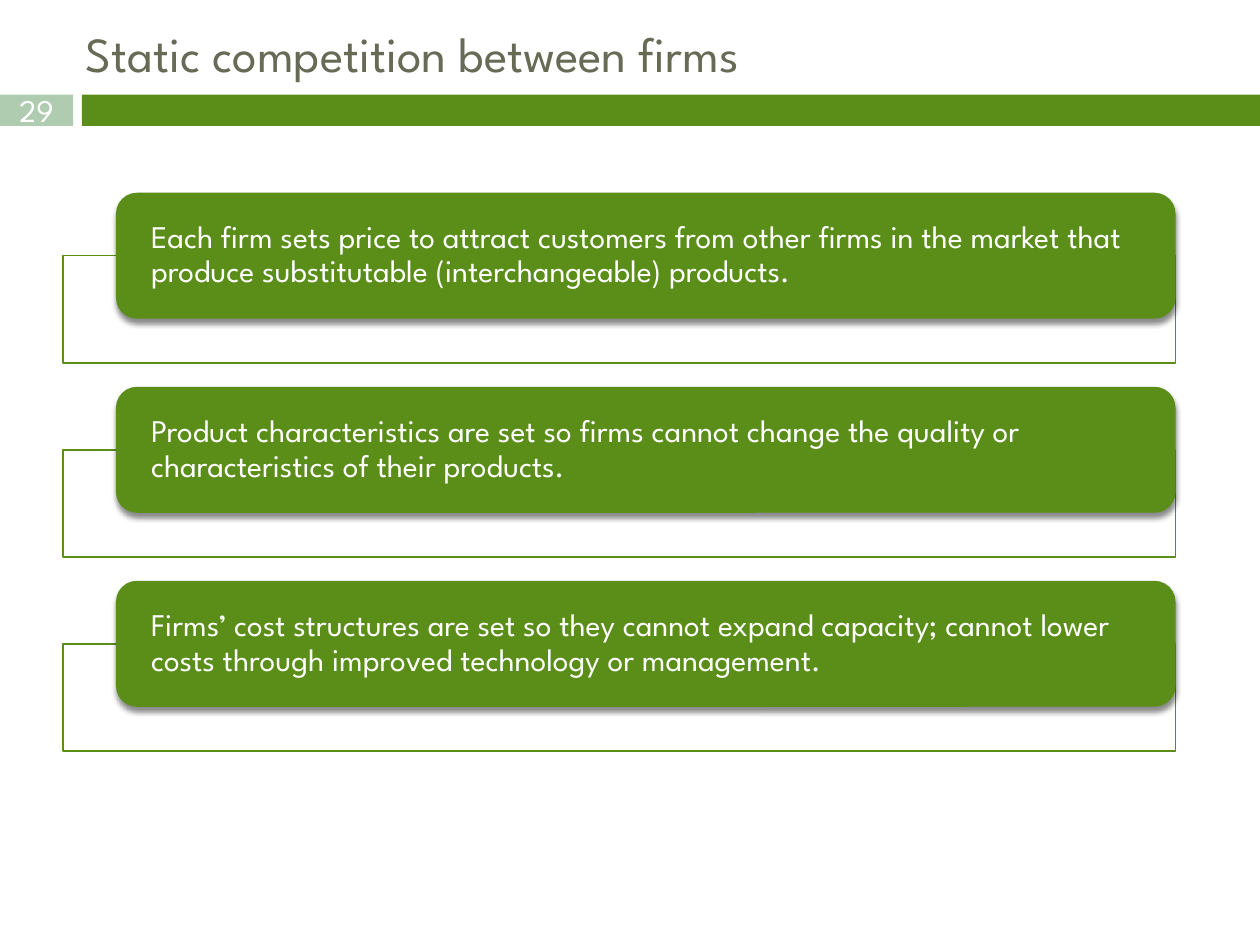
from dataclasses import dataclass

from lxml import etree
from pptx import Presentation
from pptx.dml.color import RGBColor
from pptx.enum.shapes import MSO_SHAPE
from pptx.enum.text import MSO_ANCHOR, MSO_AUTO_SIZE, PP_ALIGN
from pptx.oxml.ns import qn
from pptx.util import Inches, Pt

RECT, ROUNDED = MSO_SHAPE.RECTANGLE, MSO_SHAPE.ROUNDED_RECTANGLE
MIDDLE, NO_FIT = MSO_ANCHOR.MIDDLE, MSO_AUTO_SIZE.NONE
LEFT, CENTER = PP_ALIGN.LEFT, PP_ALIGN.CENTER
TITLE_ONLY = 5


@dataclass(frozen=True)
class Theme:
    font: str = "League Spartan"
    green: str = "5A8E19"
    pale_green: str = "B0CCB0"
    title_ink: str = "676A55"
    white: str = "FFFFFF"
    black: str = "000000"
    title_size: int = 28
    body_size: int = 18
    outline: float = 0.79


THEME = Theme()
WIDTH, HEIGHT = 10, 7.5
HEADER_TOP, HEADER_HEIGHT = 0.75, 0.25
FRAME_LEFT, CARD_LEFT, RIGHT_EDGE = 0.5, 0.92, 9.33
FIRST_ROW, ROW_PITCH = 1.53, 1.54
CARD_HEIGHT, FRAME_HEIGHT = 1, 0.85

ASSUMPTIONS = (
    "Each firm sets price to attract customers from other firms in the market "
    "that produce substitutable (interchangeable) products.",
    "Product characteristics are set so firms cannot change the quality or "
    "characteristics of their products.",
    "Firms’ cost structures are set so they cannot expand capacity; cannot "
    "lower costs through improved technology or management.",
)


def apply(target, values):
    for attribute, value in values.items():
        setattr(target, attribute, value)


def write(shape, text, size, color, align=LEFT, inset=0.1, spacing=1.0):
    frame = shape.text_frame
    frame.text = text
    apply(frame, {
        "word_wrap": True, "auto_size": NO_FIT, "vertical_anchor": MIDDLE,
        "margin_left": Inches(inset), "margin_right": Inches(inset),
        "margin_top": 0, "margin_bottom": 0,
    })
    paragraph = frame.paragraphs[0]
    apply(paragraph, {"alignment": align, "line_spacing": spacing})
    font = paragraph.runs[0].font
    apply(font, {"name": THEME.font, "size": Pt(size)})
    font.color.rgb = RGBColor.from_string(color)


def add_block(slide, kind, left, top, width, height, fill):
    block = slide.shapes.add_shape(
        kind, Inches(left), Inches(top), Inches(width), Inches(height))
    block.shadow.inherit = False
    block.fill.solid()
    block.fill.fore_color.rgb = RGBColor.from_string(fill)
    block.line.fill.background()
    return block


def set_alpha(color_element, percent):
    etree.SubElement(color_element, qn("a:alpha"), val=str(percent * 1000))


def add_drop_shadow(block):
    effects = block.element.spPr.find(qn("a:effectLst"))
    shadow = etree.SubElement(
        effects, qn("a:outerShdw"), blurRad=str(Pt(3)), dist=str(Pt(2.4)),
        dir="5400000", rotWithShape="0")
    color = etree.SubElement(shadow, qn("a:srgbClr"), val=THEME.black)
    set_alpha(color, 45)


def add_header(slide, title, number):
    number_box = add_block(slide, RECT, 0, HEADER_TOP, 0.58, HEADER_HEIGHT,
                           THEME.pale_green)
    write(number_box, number, THEME.body_size, THEME.white, CENTER, inset=0)
    add_block(slide, RECT, 0.65, HEADER_TOP, WIDTH - 0.65, HEADER_HEIGHT,
              THEME.green)
    heading = slide.shapes.title
    apply(heading, {"left": Inches(0.58), "top": Inches(0.18),
                    "width": Inches(8.92), "height": Inches(0.48)})
    write(heading, title, THEME.title_size, THEME.title_ink)


def add_assumption(slide, row, text):
    """Draw a card overlapping the outlined frame behind it."""
    top = FIRST_ROW + row * ROW_PITCH
    frame = add_block(slide, RECT, FRAME_LEFT, top + CARD_HEIGHT / 2,
                      RIGHT_EDGE - FRAME_LEFT, FRAME_HEIGHT, THEME.white)
    set_alpha(frame.element.spPr.find(qn("a:solidFill"))[0], 90)
    frame.line.color.rgb = RGBColor.from_string(THEME.green)
    frame.line.width = Pt(THEME.outline)

    card = add_block(slide, ROUNDED, CARD_LEFT, top, RIGHT_EDGE - CARD_LEFT,
                     CARD_HEIGHT, THEME.green)
    add_drop_shadow(card)
    write(card, text, THEME.body_size, THEME.white, inset=0.23, spacing=0.9)


def main():
    deck = Presentation()
    apply(deck, {"slide_width": Inches(WIDTH), "slide_height": Inches(HEIGHT)})
    slide = deck.slides.add_slide(deck.slide_layouts[TITLE_ONLY])
    add_header(slide, "Static competition between firms", "29")
    for row, text in enumerate(ASSUMPTIONS):
        add_assumption(slide, row, text)
    deck.save("out.pptx")


if __name__ == "__main__":
    main()
